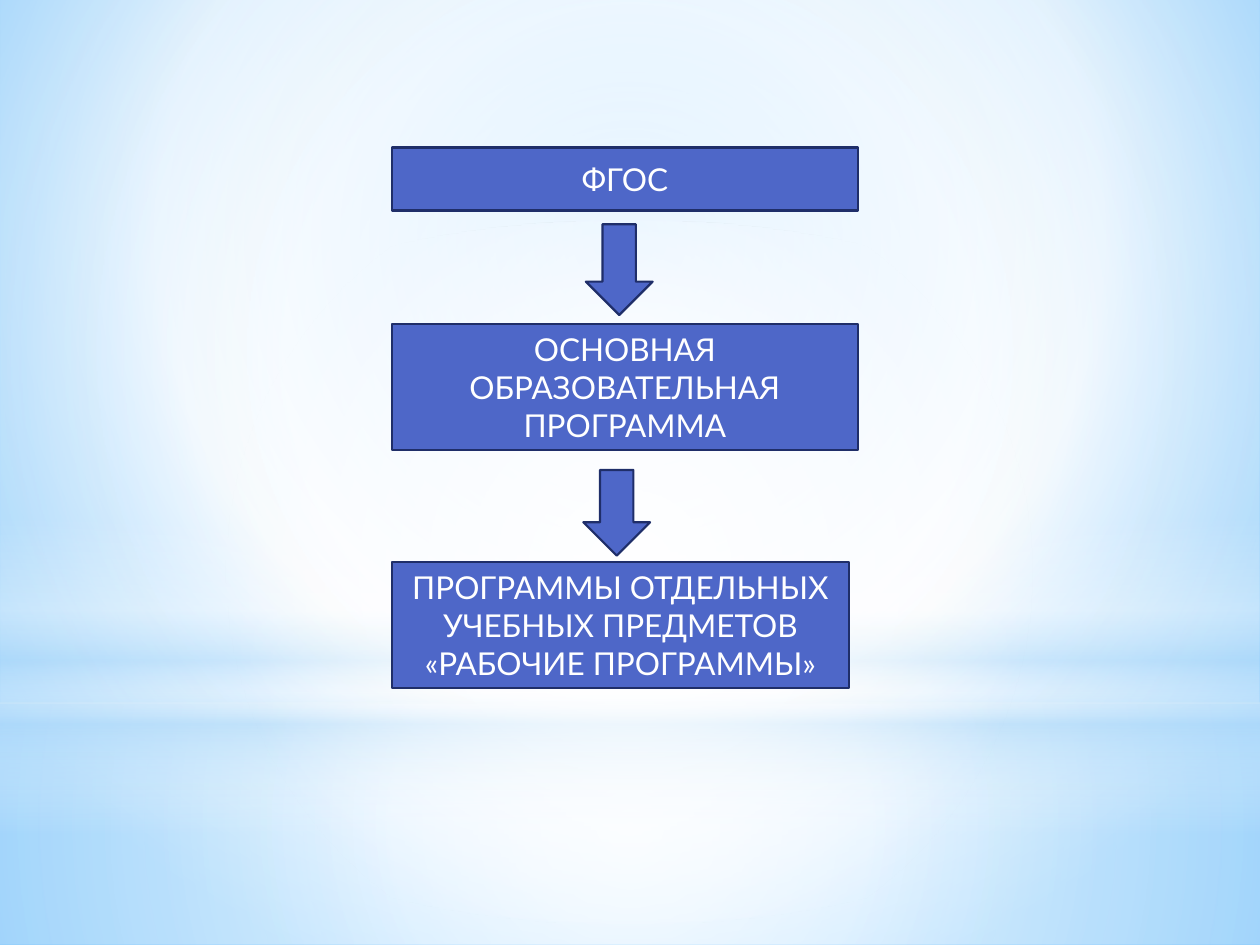
from typing import NamedTuple, Optional

from lxml import etree
from pptx import Presentation
from pptx import util as u
from pptx.dml.color import RGBColor
from pptx.enum import shapes, text
from pptx.oxml.ns import nsdecls, qn

COLORS = {
    "box": "4E67C8",
    "edge": "1F2E69",
    "white": "FFFFFF",
    "mist": "B4DCFA",
    "sky": "9ED5FF",
    "deep": "5BB9FF",
}
SHAPE = shapes.MSO_SHAPE
WIDTH, HEIGHT = u.Inches(10), u.Inches(7.5)


class Area(NamedTuple):
    """Percent shares of the slide's width and height."""
    left: float
    top: float
    width: float
    height: float


class Stop(NamedTuple):
    position: int
    color: str
    opacity: int = 100


class Gradient(NamedTuple):
    stops: list[Stop]
    focus: Optional[tuple[int, int, int, int]] = (50, 50, 50, 50)


class Layer(NamedTuple):
    area: Area
    gradient: Gradient
    kind: int = SHAPE.RECTANGLE


class Step(NamedTuple):
    area: Area
    label: str = ""
    kind: int = SHAPE.RECTANGLE


BACKDROP = Gradient([Stop(0, "sky"), Stop(60, "white"), Stop(100, "deep")], (20, 10, 20, 60))
LAYERS = [
    Layer(Area(0, 74.4, 100, 25.6),
          Gradient([Stop(0, "white", 91), Stop(37, "white", 76), Stop(100, "mist", 79)])),
    Layer(Area(0, 0, 100, 74.4),
          Gradient([Stop(0, "white", 89), Stop(48, "white", 62), Stop(100, "mist", 79)])),
    Layer(Area(0, 54.93, 100, 33.33),
          Gradient([Stop(0, "white", 0), Stop(29, "white", 30), Stop(45, "mist", 40),
                    Stop(55, "white", 26), Stop(65, "mist", 60), Stop(100, "white", 0)], None)),
    Layer(Area(0, 23.33, 100, 74.4),
          Gradient([Stop(0, "white"), Stop(56, "white", 0)]), SHAPE.OVAL),
]
STEPS = [
    Step(Area(31.1, 15.6, 37, 6.67), "ФГОС"),
    Step(Area(31.1, 34.27, 37, 13.33), "ОСНОВНАЯ ОБРАЗОВАТЕЛЬНАЯ ПРОГРАММА"),
    Step(Area(31.1, 59.47, 36.3, 13.33),
         "ПРОГРАММЫ ОТДЕЛЬНЫХ УЧЕБНЫХ ПРЕДМЕТОВ «РАБОЧИЕ ПРОГРАММЫ»"),
    Step(Area(46.5, 23.73, 5.3, 9.6), kind=SHAPE.DOWN_ARROW),
    Step(Area(46.3, 49.73, 5.3, 9.07), kind=SHAPE.DOWN_ARROW),
]


def rgb(name: str) -> RGBColor:
    return RGBColor.from_string(COLORS[name])


def set_gradient(fill, properties, gradient: Gradient) -> None:
    fill.solid()
    stops = "".join(
        f'<a:gs pos="{stop.position * 1000}"><a:srgbClr val="{COLORS[stop.color]}">'
        f'<a:alpha val="{stop.opacity * 1000}"/></a:srgbClr></a:gs>'
        for stop in gradient.stops
    )
    if gradient.focus:
        sides = " ".join(f'{side}="{share * 1000}"' for side, share in zip("ltrb", gradient.focus))
        direction = f'<a:path path="circle"><a:fillToRect {sides}/></a:path>'
    else:
        direction = '<a:lin ang="5400000" scaled="0"/>'
    blend = etree.fromstring(
        f'<a:gradFill {nsdecls("a")} rotWithShape="1"><a:gsLst>{stops}</a:gsLst>'
        f'{direction}</a:gradFill>'
    )
    properties.replace(properties.find(qn("a:solidFill")), blend)


def add_box(page, kind: int, area: Area):
    box = page.shapes.add_shape(
        kind,
        round(WIDTH * area.left / 100), round(HEIGHT * area.top / 100),
        round(WIDTH * area.width / 100), round(HEIGHT * area.height / 100),
    )
    box.shadow.inherit = False
    return box


def write(box, label: str, *, font: str = "Lato", size: float = 18, color: str = "white") -> None:
    frame = box.text_frame
    frame.word_wrap = True
    frame.vertical_anchor = text.MSO_ANCHOR.MIDDLE
    para = frame.paragraphs[0]
    para.alignment = text.PP_ALIGN.CENTER
    span = para.add_run()
    span.text = label
    span.font.name = font
    span.font.size = u.Pt(size)
    span.font.color.rgb = rgb(color)


def draw_layer(page, layer: Layer) -> None:
    box = add_box(page, layer.kind, layer.area)
    box.line.fill.background()
    set_gradient(box.fill, box.element.spPr, layer.gradient)


def draw_step(page, step: Step) -> None:
    box = add_box(page, step.kind, step.area)
    box.fill.solid()
    box.fill.fore_color.rgb = rgb("box")
    box.line.color.rgb = rgb("edge")
    box.line.width = u.Pt(1.25)
    if step.label:
        write(box, step.label)


def main() -> None:
    deck = Presentation()
    deck.slide_width, deck.slide_height = WIDTH, HEIGHT
    page = deck.slides.add_slide(deck.slide_layouts[6])
    fill = page.background.fill
    fill.solid()
    set_gradient(fill, next(page.element.iter(qn("p:bgPr"))), BACKDROP)
    for layer in LAYERS:
        draw_layer(page, layer)
    for step in STEPS:
        draw_step(page, step)
    deck.save("out.pptx")


if __name__ == "__main__":
    main()
